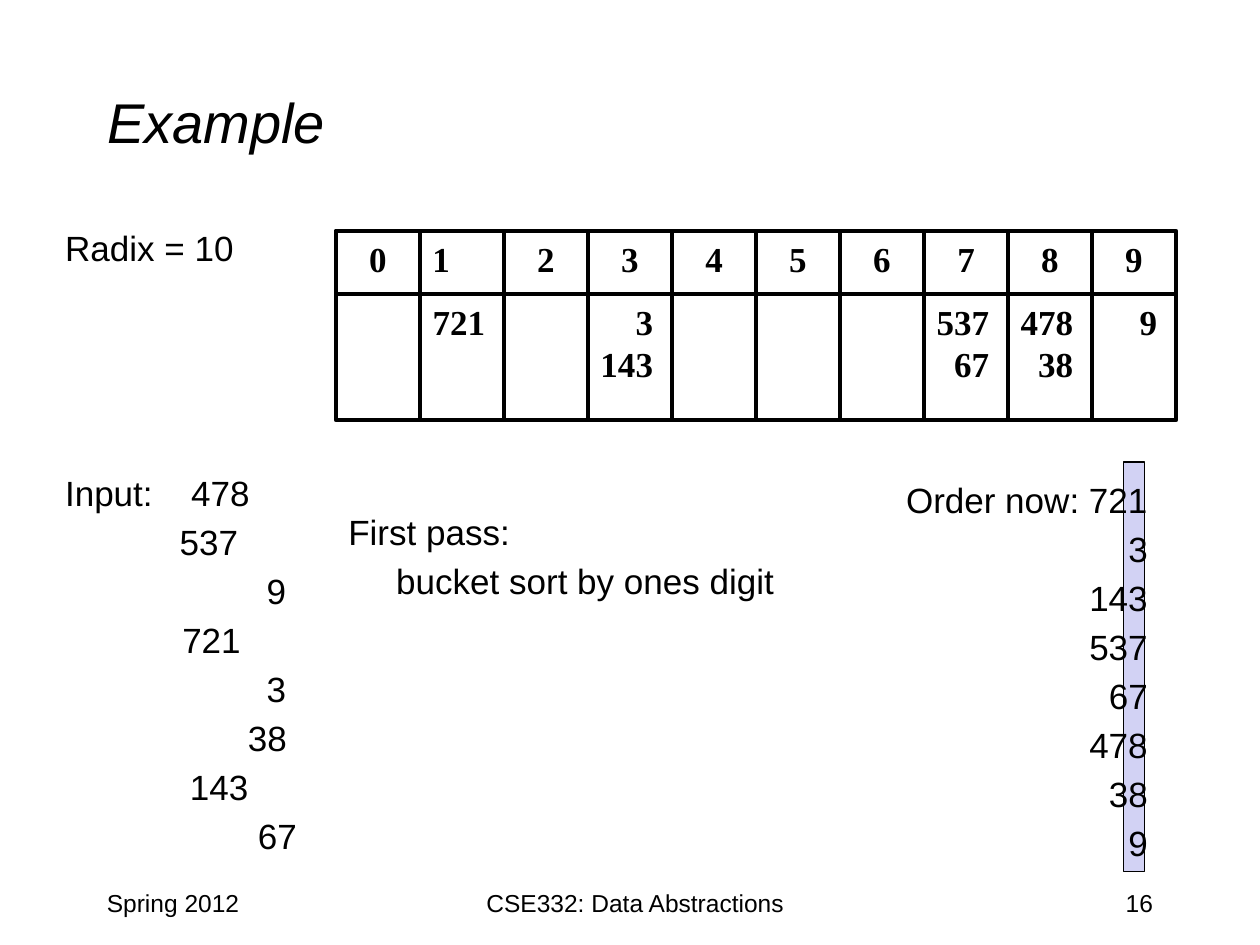
from dataclasses import dataclass
from typing import Iterable

from pptx import Presentation
from pptx.dml.color import RGBColor
from pptx.enum.shapes import MSO_SHAPE as Preset
from pptx.enum.text import MSO_ANCHOR as Anchor, MSO_AUTO_SIZE as AutoSize, PP_ALIGN as Align
from pptx.oxml.ns import qn
from pptx.util import Inches, Pt

BLACK = RGBColor(0, 0, 0)
LAVENDER = RGBColor(0xD2, 0xD2, 0xF4)

# The slide is a grid of 120 columns by 90 rows
WIDTH, HEIGHT = Inches(10), Inches(7.5)
COLUMN, ROW = WIDTH / 120, HEIGHT / 90

BODY = {"name": "Arial", "size": Pt(20)}
TITLE = {"name": "Arial", "size": Pt(32), "italic": True}
FOOTER = {"name": "Arial", "size": Pt(14)}
BUCKET = {"name": "Times New Roman", "size": Pt(20), "bold": True}


@dataclass(frozen=True)
class Area:
    column: float
    row: float
    columns: float
    rows: float


@dataclass(frozen=True)
class Line:
    text: str
    indent: float = 0  # inches
    before: float = 4  # points
    tab: float = 0  # inches


@dataclass(frozen=True)
class Bucket:
    digit: int
    numbers: tuple[str, ...] = ()
    align: Align = Align.CENTER


def place(shape, area: Area) -> None:
    box = {"left": area.column * COLUMN, "top": area.row * ROW,
           "width": area.columns * COLUMN, "height": area.rows * ROW}
    for name, value in box.items():
        setattr(shape, name, round(value))


def write(shape, lines: Iterable[Line], font: dict, align: Align = Align.LEFT,
          anchor: Anchor = Anchor.TOP, margin_right: float = 0.1) -> None:
    frame = shape.text_frame
    settings = {"word_wrap": True, "auto_size": AutoSize.NONE, "vertical_anchor": anchor,
                "margin_right": Inches(margin_right)}
    for name, value in settings.items():
        setattr(frame, name, value)
    for index, line in enumerate(lines):
        paragraph = frame.add_paragraph() if index else frame.paragraphs[0]
        paragraph.alignment = align
        paragraph.space_before = Pt(line.before)
        properties = paragraph._p.get_or_add_pPr()
        properties.set("marL", str(Inches(line.indent)))
        properties.set("indent", "0")
        properties.append(properties.makeelement(qn("a:buNone"), {}))
        if line.tab:
            tabs = properties.makeelement(qn("a:tabLst"), {})
            tabs.append(tabs.makeelement(qn("a:tab"), {"pos": str(Inches(line.tab)), "algn": "l"}))
            properties.append(tabs)
        run = paragraph.add_run()
        run.text = line.text
        run.font.color.rgb = BLACK
        for name, value in font.items():
            setattr(run.font, name, value)


def add_text(slide, area: Area, lines: Iterable[Line], font: dict, **options) -> None:
    shape = slide.shapes.add_textbox(0, 0, 0, 0)
    place(shape, area)
    write(shape, lines, font, **options)


def add_rectangle(slide, area: Area, line_width: float, fill: RGBColor | None = None):
    shape = slide.shapes.add_shape(Preset.RECTANGLE, 0, 0, 0, 0)
    place(shape, area)
    shape.shadow.inherit = False
    shape.line.color.rgb = BLACK
    shape.line.width = Pt(line_width)
    if fill is None:
        shape.fill.background()
    else:
        shape.fill.solid()
        shape.fill.fore_color.rgb = fill
    return shape


def add_bucket(slide, bucket: Bucket) -> None:
    column = 32 + 8 * bucket.digit
    header = add_rectangle(slide, Area(column, 22, 8, 6), 2.75)
    write(header, [Line(str(bucket.digit), before=0)], BUCKET, align=bucket.align)
    content = add_rectangle(slide, Area(column, 28, 8, 12), 2.75)
    if bucket.numbers:
        write(content, [Line(number, before=0) for number in bucket.numbers], BUCKET,
              align=Align.RIGHT, margin_right=0.15)


BUCKETS = [
    Bucket(0), Bucket(1, ("721",), Align.LEFT), Bucket(2), Bucket(3, ("3", "143")),
    Bucket(4), Bucket(5), Bucket(6), Bucket(7, ("537", "67")),
    Bucket(8, ("478", "38")), Bucket(9, ("9",)),
]
INPUT = [
    Line("Radix = 10"), Line("Input:\t478", before=116, tab=0.93),
    Line("537", 0.91), Line("9", 1.6), Line("721", 0.93), Line("3", 1.6),
    Line("38", 1.45), Line("143", 0.99), Line("67", 1.53),
]
ORDER = ["Order now: 721", "3", "143", "537", "67", "478", "38", "9"]


def main() -> None:
    presentation = Presentation()
    presentation.slide_width, presentation.slide_height = WIDTH, HEIGHT
    slide = presentation.slides.add_slide(presentation.slide_layouts[1])

    # Highlight on the ones digit, behind all text
    highlight = add_rectangle(slide, Area(107, 44, 2, 39), 0.75, LAVENDER)
    slide.shapes._spTree.insert(2, highlight._element)

    # Title and input list
    title, body = slide.placeholders
    place(title, Area(9, 4, 102, 15))
    write(title, [Line("Example", before=0)], TITLE, anchor=Anchor.MIDDLE)
    place(body, Area(5, 21, 26, 62))
    write(body, INPUT, BODY)

    # Footer
    add_text(slide, Area(9, 84, 25, 6), [Line("Spring 2012", before=0)], FOOTER)
    add_text(slide, Area(86, 84, 25, 6), [Line("16", before=0)], FOOTER, align=Align.RIGHT)
    add_text(slide, Area(38, 84, 45, 6), [Line("CSE332: Data Abstractions", before=0)],
             FOOTER, align=Align.CENTER)

    # Explanation, buckets and resulting order
    add_text(slide, Area(32, 48, 55, 12),
             [Line("First pass:"), Line("bucket sort by ones digit", 0.38)], BODY)
    for bucket in BUCKETS:
        add_bucket(slide, bucket)
    add_text(slide, Area(85, 45, 29, 39), [Line(text) for text in ORDER], BODY,
             align=Align.RIGHT, margin_right=0.39)

    presentation.save("out.pptx")


if __name__ == "__main__":
    main()
